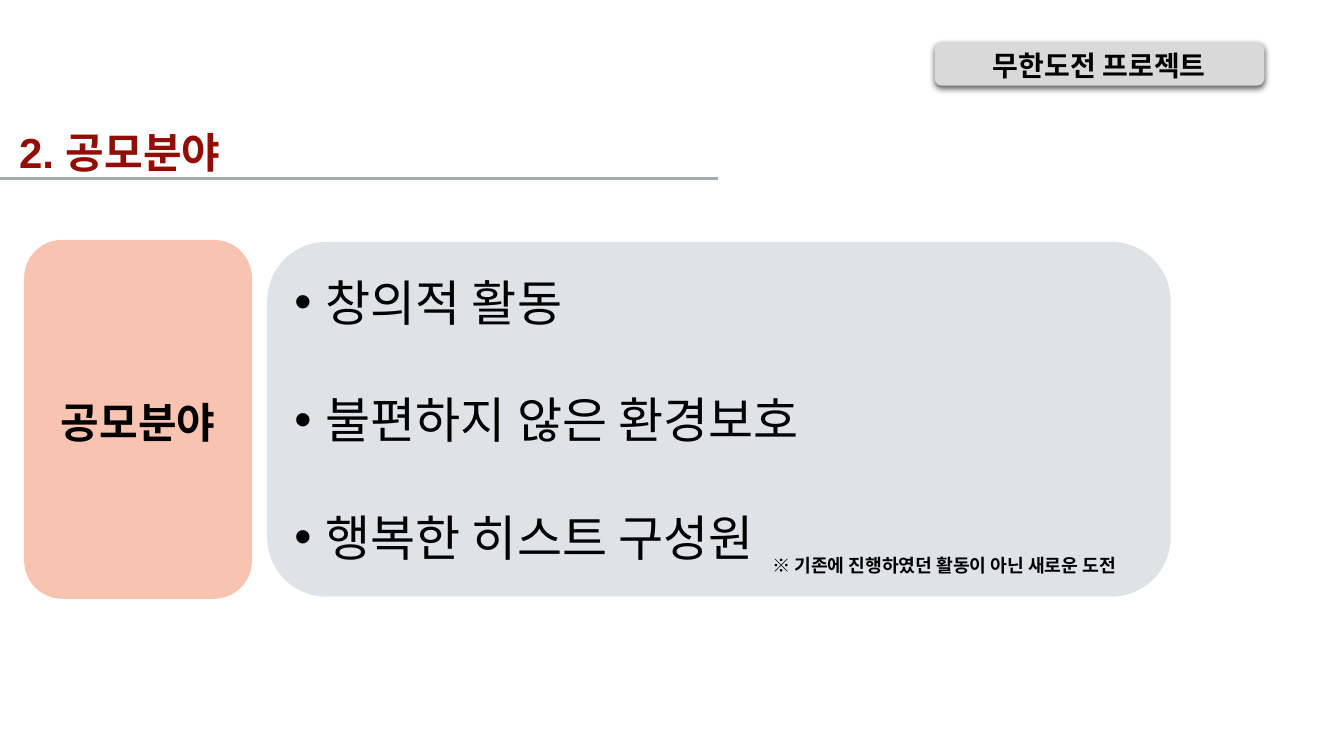
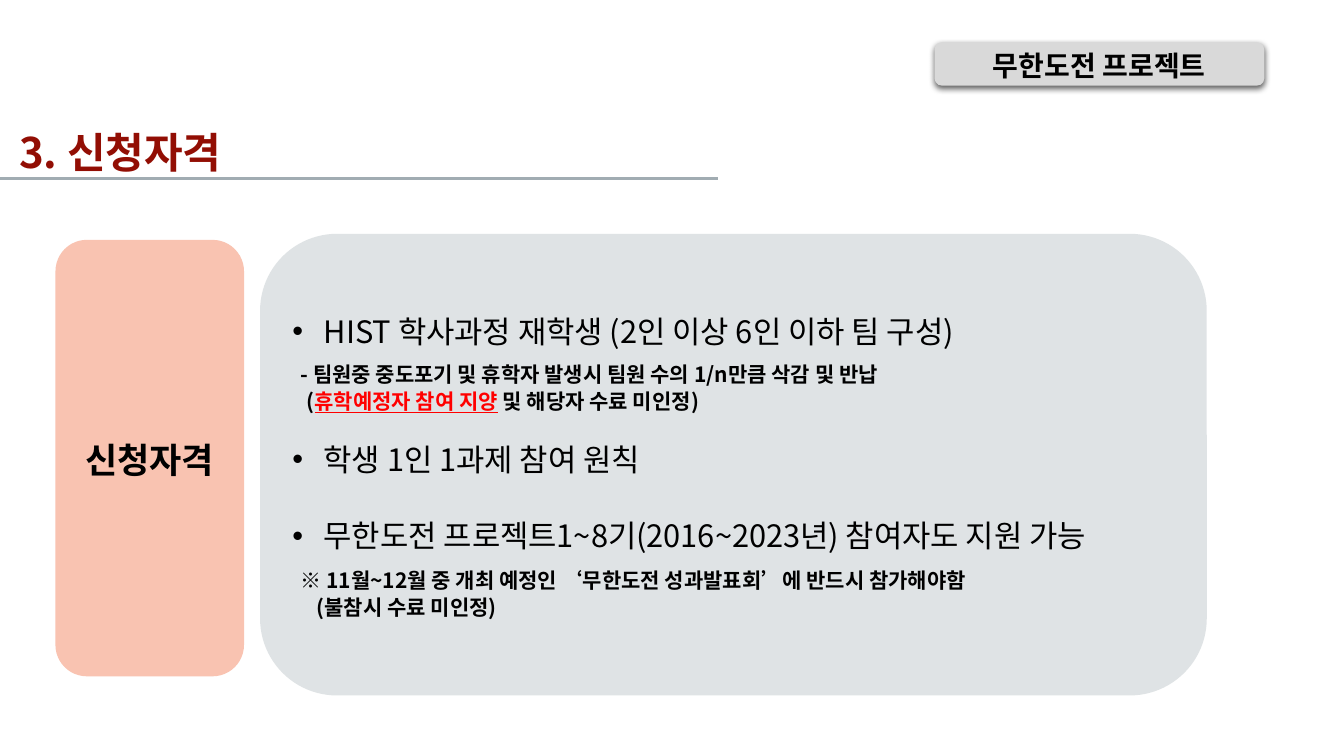
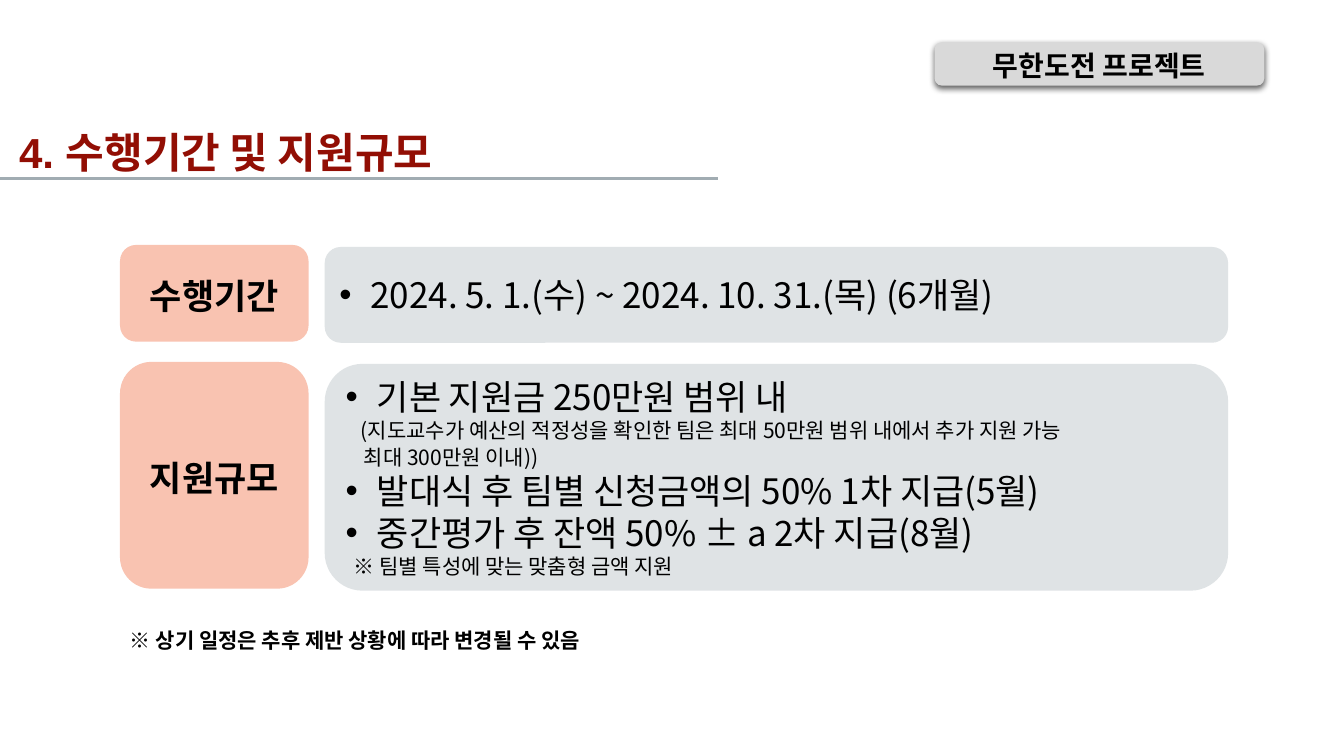
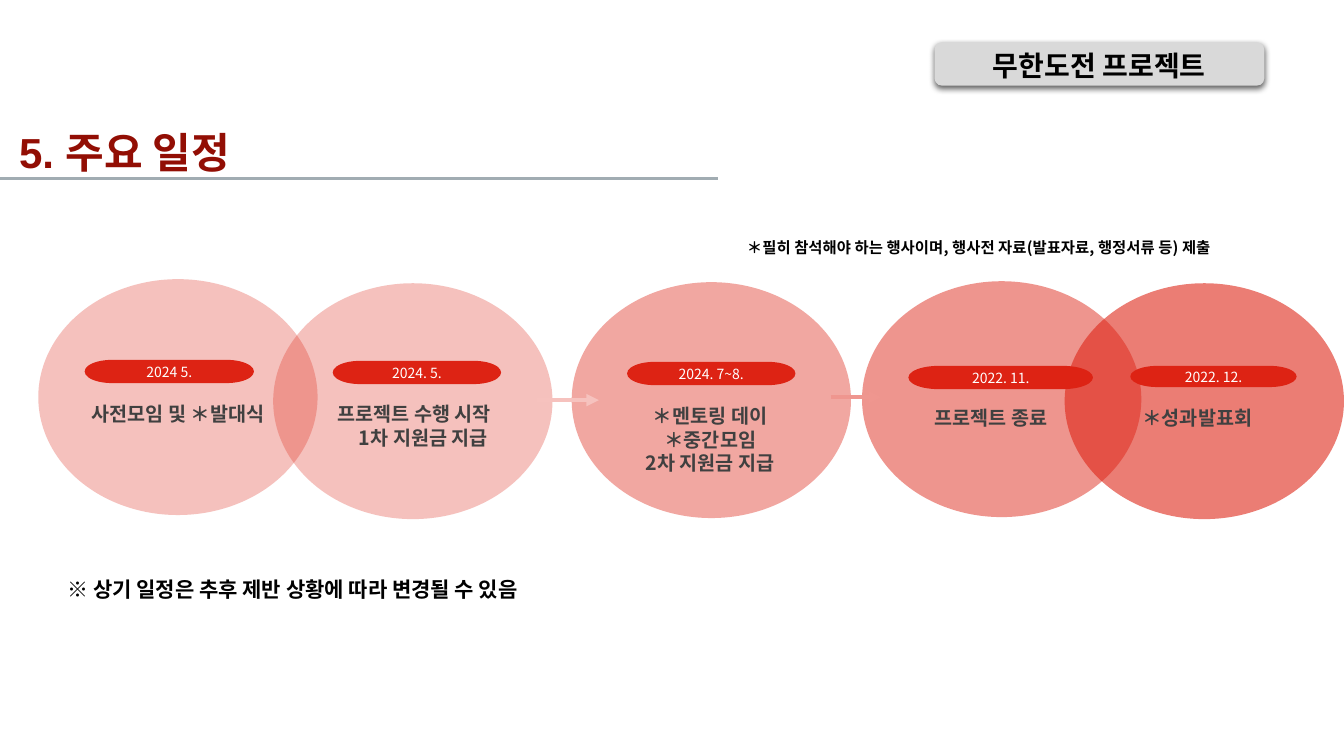
from lxml import etree
from pptx import Presentation
from pptx.dml.color import RGBColor
from pptx.enum.shapes import MSO_CONNECTOR, MSO_SHAPE
from pptx.enum.text import MSO_ANCHOR, PP_ALIGN
from pptx.oxml.ns import qn
from pptx.util import Inches, Pt

ROUND, OVAL = MSO_SHAPE.ROUNDED_RECTANGLE, MSO_SHAPE.OVAL
PILL = MSO_SHAPE.FLOWCHART_TERMINATOR
STRAIGHT = MSO_CONNECTOR.STRAIGHT
LEFT, CENTER = PP_ALIGN.LEFT, PP_ALIGN.CENTER
MIDDLE, TOP = MSO_ANCHOR.MIDDLE, MSO_ANCHOR.TOP

COLORS = {
    "black": "000000", "white": "FFFFFF", "gray": "404040",
    "title": "920E04", "rule": "A1ACB2", "badge": "D9D9D9",
    "label": "F9C3B1", "panel": "DFE3E5", "red": "DD2314",
    "alert": "FF0000", "arrow_pale": "F6C2BE", "arrow_deep": "EF968F",
}
KOREAN = "Noto Sans CJK KR"

# Text formats: font attributes plus colour
TITLE = {"size": 30, "bold": True, "name": "Arial", "color": "title"}
BADGE = {"size": 20, "bold": True}
LABEL = {"size": 25, "bold": True}
BIG_LABEL = {"size": 30, "bold": True}
NOTE = {"size": 15, "bold": True, "name": "Arial"}
DATE = {"size": 10, "color": "white"}
EVENT = {"size": 14, "bold": True, "color": "gray"}
SMALL = {"size": 15}
SMALL_BOLD = {"size": 15, "bold": True}
BULLET = {"bullet": True}

deck = Presentation()
deck.slide_width, deck.slide_height = Inches(13.33), Inches(7.5)
COLUMN = deck.slide_width / 100
ROW = deck.slide_height / 100


def write(box, paras, style, ratio, align):
    """Fill a box with (text or spans, format) pairs; line height is size times ratio."""
    frame = box.text_frame
    frame.word_wrap = True
    for number, (content, layout) in enumerate(paras):
        para = frame.paragraphs[0] if number == 0 else frame.add_paragraph()
        look = {"name": KOREAN, "color": "black", "bold": False, **style, **layout.get("font", {})}
        para.alignment = layout.get("align", align)
        para.line_spacing = Pt(round(look["size"] * ratio, 1))
        para.space_before = Pt(layout.get("before", 0))
        bulleted = layout.get("bullet", False)
        margin = Inches(0.31 if bulleted else layout.get("margin", 0))
        properties = para._p.get_or_add_pPr()
        properties.set("marL", str(margin))
        properties.set("indent", str(-margin if bulleted else 0))
        if bulleted:
            etree.SubElement(properties, qn("a:buFont")).set("typeface", "Arial")
            etree.SubElement(properties, qn("a:buChar")).set("char", "•")
        spans = [(content, {})] if isinstance(content, str) else content
        for text, change in spans:
            span = para.add_run()
            span.text = text
            for key, value in {**look, **change}.items():
                if key == "color":
                    span.font.color.rgb = RGBColor.from_string(COLORS[value])
                else:
                    setattr(span.font, key, Pt(value) if key == "size" else value)
            etree.SubElement(span._r.get_or_add_rPr(), qn("a:ea")).set("typeface", KOREAN)


def add_block(page, area, paras=(), style=None, preset=None, fill=None,
              alpha=100, ratio=1.3, align=LEFT):
    """Add a preset shape, or a text box when no preset is given; area is in percent."""
    left, top, width, height = area
    place = [round(v) for v in (left * COLUMN, top * ROW, width * COLUMN, height * ROW)]
    if preset is None:
        box = page.shapes.add_textbox(*place)
    else:
        box = page.shapes.add_shape(preset, *place)
        box.shadow.inherit = False
        box.line.fill.background()
        box.fill.solid()
        box.fill.fore_color.rgb = RGBColor.from_string(COLORS[fill])
        if alpha < 100:
            color = box._element.spPr.find(".//" + qn("a:srgbClr"))
            etree.SubElement(color, qn("a:alpha")).set("val", str(alpha * 1000))
    box.text_frame.vertical_anchor = TOP if preset is None else MIDDLE
    write(box, paras, style or {}, ratio, align)
    return box


label_shape = {"preset": ROUND, "fill": "label", "align": CENTER}
panel_shape = {"preset": ROUND, "fill": "panel"}
schedule_note = [("※ 상기 일정은 추후 제반 상황에 따라 변경될 수 있음", {})]

# Shared parts: badge, title and the rule under it
headings = [("2. 공모분야", {}), ("3. 신청자격", {"name": KOREAN}),
            ("4. 수행기간 및 지원규모", {}), ("5. 주요 일정", {})]
pages = []
for heading, change in headings:
    page = deck.slides.add_slide(deck.slide_layouts[6])
    pages.append(page)
    badge = add_block(page, (69.54, 5.6, 24.53, 5.73), [("무한도전 프로젝트", {})], BADGE,
                      ROUND, "badge", align=CENTER)
    effects = badge._element.spPr.find(qn("a:effectLst"))
    shadow = etree.SubElement(effects, qn("a:outerShdw"), blurRad=str(Pt(4.5)),
                              dist=str(Pt(1.5)), dir="5400000", algn="t", rotWithShape="0")
    shade = etree.SubElement(shadow, qn("a:srgbClr"), val=COLORS["black"])
    etree.SubElement(shade, qn("a:alpha"), val="63000")
    add_block(page, (0.68, 15.47, 59.94, 8.13), [(heading, {})], {**TITLE, **change})
field_page, entry_page, support_page, schedule_page = pages

# Fields
add_block(field_page, (1.8, 31.73, 16.95, 47.47), [("공모분야", {})], BIG_LABEL, **label_shape)
fields = ["창의적 활동", "불편하지 않은 환경보호", "행복한 히스트 구성원"]
add_block(field_page, (19.88, 32, 67.22, 46.93),
          [(field, {**BULLET, "before": 42 if number else 0})
           for number, field in enumerate(fields)],
          {"size": 35}, ratio=1.2, **panel_shape)
add_block(field_page, (56.71, 72.4, 40, 4.27),
          [("※ 기존에 진행하였던 활동이 아닌 새로운 도전", {})], {"size": 13, "bold": True})

# Eligibility
add_block(entry_page, (4.13, 31.73, 14.03, 57.73), [("신청자격", {})], LABEL, **label_shape)
add_block(entry_page, (19.35, 30.93, 70.44, 61.07), [
    ("HIST 학사과정 재학생 (2인 이상 6인 이하 팀 구성)", BULLET),
    ("- 팀원중 중도포기 및 휴학자 발생시 팀원 수의 1/n만큼 삭감 및 반납",
     {"font": SMALL_BOLD, "before": 7, "margin": 0.08}),
    ([("(", {}), ("휴학예정자 참여 지양", {"color": "alert", "underline": True}),
      (" 및 해당자 수료 미인정)", {})], {"font": SMALL_BOLD, "margin": 0.14}),
    ("학생 1인 1과제 참여 원칙", {**BULLET, "before": 17}),
    ("무한도전 프로젝트1~8기(2016~2023년) 참여자도 지원 가능", {**BULLET, "before": 26}),
    ("※ 11월~12월 중 개최 예정인 ‘무한도전 성과발표회’에 반드시 참가해야함",
     {"font": SMALL_BOLD, "before": 8, "margin": 0.08}),
    ("(불참시 수료 미인정)", {"font": SMALL_BOLD, "margin": 0.24}),
], {"size": 22}, **panel_shape)

# Period and support
support_rows = [
    ("수행기간", 32.4, 12.8, 32.67, 12.67,
     [("2024. 5. 1.(수) ~ 2024. 10. 31.(목) (6개월)", BULLET)]),
    ("지원규모", 47.87, 30, 48.13, 30, [
        ("기본 지원금 250만원 범위 내", BULLET),
        ("(지도교수가 예산의 적정성을 확인한 팀은 최대 50만원 범위 내에서 추가 지원 가능",
         {"font": SMALL, "margin": 0.15}),
        ("최대 300만원 이내))", {"font": SMALL, "margin": 0.18, "before": 1}),
        ("발대식 후 팀별 신청금액의 50% 1차 지급(5월)", BULLET),
        ("중간평가 후 잔액 50% ± a 2차 지급(8월)", BULLET),
        ("※ 팀별 특성에 맞는 맞춤형 금액 지원", {"font": SMALL, "margin": 0.08}),
    ]),
]
for name, label_top, label_height, panel_top, panel_height, paras in support_rows:
    add_block(support_page, (8.93, label_top, 14.03, label_height), [(name, {})], LABEL,
              **label_shape)
    add_block(support_page, (24.16, panel_top, 67.22, panel_height), paras, {"size": 25},
              ratio=1.2, **panel_shape)
add_block(support_page, (8.93, 82.13, 66.09, 4.67), schedule_note, NOTE)

# Schedule: oval (left, top, alpha), date with its pill, event text with its left, top, width
stages = [
    ((2.85, 36.93, 28), "2024 5.", (6.3, 47.6, 12.6, 3.07),
     ["사전모임 및 ＊발대식"], (6.08, 52.53, 20.56), [LEFT]),
    ((20.33, 37.47, 28), "2024. 5.", (24.76, 47.73, 12.53, 3.07),
     ["프로젝트 수행 시작", "1차 지원금 지급"], (24.38, 52.53, 14.25), [LEFT, CENTER]),
    ((42.54, 37.33, 40), "2024. 7~8.", (46.66, 47.87, 12.53, 3.07),
     ["＊멘토링 데이", "＊중간모임", "2차 지원금 지급"], (46.06, 52.8, 13.58), [CENTER] * 3),
    ((64.14, 37.2, 48), "2022. 11.", (67.59, 48.4, 13.73, 3.07),
     ["프로젝트 종료"], (68.79, 53.07, 15.68), [LEFT]),
    ((79.22, 37.47, 59), "2022. 12.", (84.1, 48.4, 12.38, 2.8),
     ["＊성과발표회"], (84.25, 53.07, 12.98), [LEFT]),
]
for (left, top, alpha), *_ in stages:
    add_block(schedule_page, (left, top, 20.78, 31.2), preset=OVAL, fill="red", alpha=alpha)
for _, date, pill, events, place, aligns in stages:
    add_block(schedule_page, pill, [(date, {})], DATE, PILL, "red", align=CENTER)
    add_block(schedule_page, (*place, 4.53 + 3.13 * (len(events) - 1)),
              [(event, {"align": align}) for event, align in zip(events, aligns)],
              EVENT, ratio=1.2)
add_block(schedule_page, (54.84, 30.67, 44, 7.87),
          [("＊필히 참석해야 하는 행사이며, 행사전 자료(발표자료, 행정서류 등) 제출", {})],
          {"size": 11, "bold": True})
add_block(schedule_page, (4.28, 75.33, 66.09, 4.67), schedule_note, NOTE)

# Rules under the titles and arrows between the stages
lines = [(page, 0, 53.41, 23.6, "rule", 2.25, False) for page in pages]
lines += [(schedule_page, 39.98, 44.56, 52.93, "arrow_pale", 3, True),
          (schedule_page, 61.82, 65.57, 52.53, "arrow_deep", 3, True)]
for page, start, end, height, color, weight, arrow in lines:
    level = round(height * ROW)
    line = page.shapes.add_connector(STRAIGHT, round(start * COLUMN), level,
                                     round(end * COLUMN), level)
    line.line.color.rgb = RGBColor.from_string(COLORS[color])
    line.line.width = Pt(weight)
    if arrow:
        etree.SubElement(line.line._get_or_add_ln(), qn("a:tailEnd")).set("type", "triangle")
    etree.SubElement(line._element.spPr, qn("a:effectLst"))

deck.save("out.pptx")
